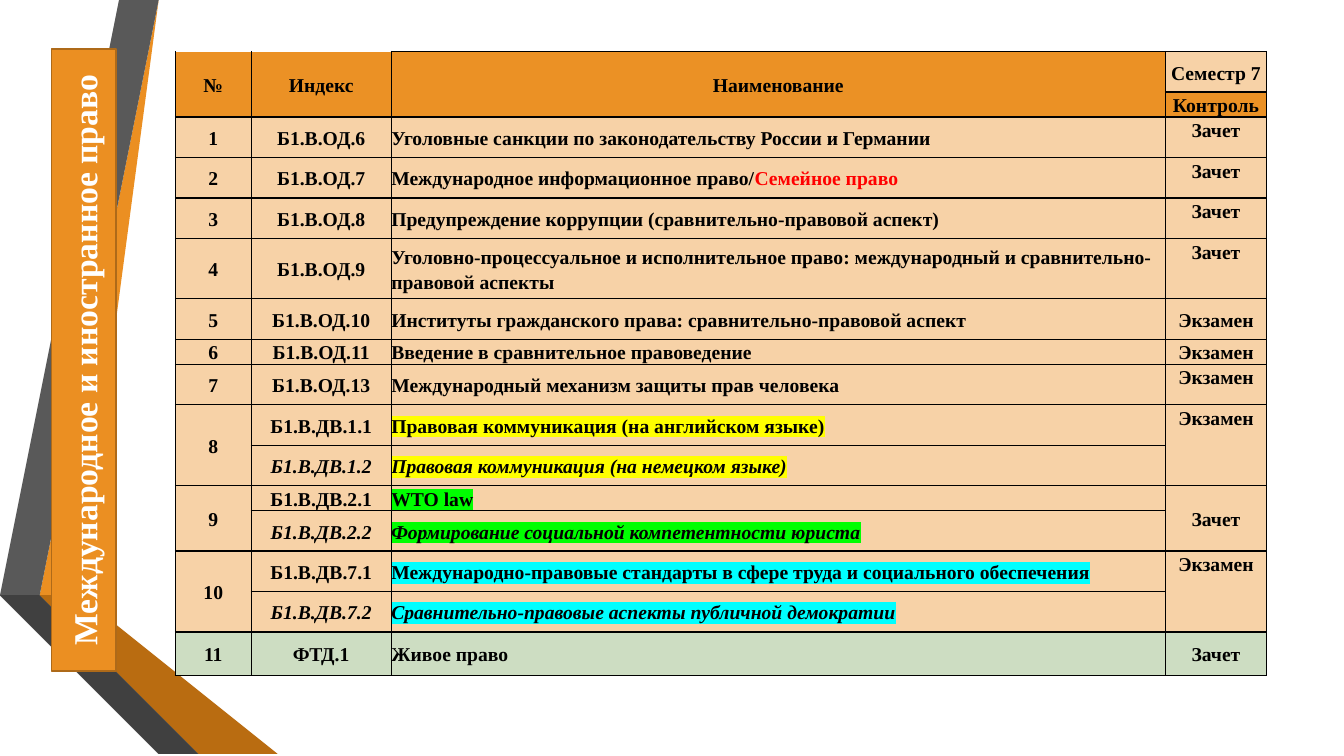
from pptx import Presentation
from pptx.dml.color import RGBColor
from pptx.enum.shapes import MSO_SHAPE
from pptx.enum.text import MSO_ANCHOR, PP_ALIGN
from pptx.oxml import parse_xml
from pptx.oxml.ns import nsdecls
from pptx.util import Cm, Pt

COLORS = {
    "orange": "EB8F22", "gray": "595959", "black": "000000", "white": "FFFFFF",
    "dark": "262626", "brown": "7B480B", "rust": "B96C11", "charcoal": "404040",
    "edge": "AE6A19", "header": "EB9125", "peach": "F7D2A7", "green": "CDDDC2",
    "red": "FF0000", "yellow": "FFFF00", "lime": "00FF00", "cyan": "00FFFF",
}
TOP, MID = MSO_ANCHOR.TOP, MSO_ANCHOR.MIDDLE


def rgb(name):
    return RGBColor.from_string(COLORS[name])


def style(p, size, color, align=PP_ALIGN.CENTER):
    p.alignment = align
    p.font.name = "Times New Roman"
    p.font.size = Pt(size)
    p.font.bold = True
    p.font.color.rgb = rgb(color)


prs = Presentation()
prs.slide_width, prs.slide_height = Cm(33.87), Cm(19.05)
s = prs.slides.add_slide(prs.slide_layouts[6])

ribbons = [
    ("orange", [(1.27, 14.68), (1.96, 14.81), (4.39, 0), (3.68, 0)]),
    ("gray", [(3.53, 0), (2.82, 0), (0.41, 14.55), (1.12, 14.66)]),
    ("dark", [(0.41, 14.55), (3.68, 19.05), (3.84, 19.05)]),
    ("brown", [(1.27, 14.7), (5.28, 19.05), (5.44, 19.05)]),
    ("rust", [(1.27, 14.7), (5.44, 19.05), (7.19, 19.05), (1.96, 14.81), (1.27, 14.68)]),
    ("charcoal", [(5.13, 19.05), (1.22, 14.81), (1.09, 14.68), (1.12, 14.66),
                  (0.41, 14.55), (3.84, 19.05)]),
]
for color, points in ribbons:
    builder = s.shapes.build_freeform(*points[0], scale=Cm(1))
    builder.add_line_segments(points[1:], close=True)
    sp = builder.convert_to_shape()
    sp.shadow.inherit = False
    sp.fill.solid()
    sp.fill.fore_color.rgb = rgb(color)
    sp.line.fill.background()

rows = [
    ("№", "Индекс", "Наименование", "Семестр 7", MID, 1.02, None),
    ("", "", "", "Контроль", MID, 0.51, None),
    ("1", "Б1.В.ОД.6", "Уголовные санкции по законодательству России и Германии",
     "Зачет", TOP, 1.02, None),
    ("2", "Б1.В.ОД.7", "Международное информационное право/|Семейное право",
     "Зачет", TOP, 1.02, None),
    ("3", "Б1.В.ОД.8", "Предупреждение коррупции (сравнительно-правовой аспект)",
     "Зачет", TOP, 1.02, None),
    ("4", "Б1.В.ОД.9", "Уголовно-процессуальное и исполнительное право: "
     "международный и сравнительно-правовой аспекты", "Зачет", TOP, 1.52, None),
    ("5", "Б1.В.ОД.10", "Институты гражданского права: сравнительно-правовой аспект",
     "Экзамен", MID, 1.02, None),
    ("6", "Б1.В.ОД.11", "Введение в сравнительное правоведение",
     "Экзамен", TOP, 0.51, None),
    ("7", "Б1.В.ОД.13", "Международный механизм защиты прав человека",
     "Экзамен", TOP, 1.02, None),
    ("8", "Б1.В.ДВ.1.1", "Правовая коммуникация (на английском языке)",
     "Экзамен", TOP, 1.02, "yellow"),
    ("", "Б1.В.ДВ.1.2", "Правовая коммуникация (на немецком языке)",
     "", TOP, 1.02, "yellow"),
    ("9", "Б1.В.ДВ.2.1", "WTO law", "Зачет", MID, 0.51, "lime"),
    ("", "Б1.В.ДВ.2.2", "Формирование социальной компетентности юриста",
     "", MID, 1.02, "lime"),
    ("10", "Б1.В.ДВ.7.1",
     "Международно-правовые стандарты в сфере труда и социального обеспечения",
     "Экзамен", TOP, 1.02, "cyan"),
    ("", "Б1.В.ДВ.7.2", "Сравнительно-правовые аспекты публичной демократии",
     "", TOP, 1.02, "cyan"),
    ("11", "ФТД.1", "Живое право", "Зачет", MID, 1.09, None),
]
widths = [1.91, 3.53, 19.51, 2.55]
table = s.shapes.add_table(len(rows), len(widths), Cm(4.42), Cm(1.3),
                           Cm(sum(widths)), Cm(sum(row[5] for row in rows))).table
table.first_row = False
table.horz_banding = False
for column, width in zip(table.columns, widths):
    column.width = Cm(width)

for i, (*texts, anchor, height, mark) in enumerate(rows):
    table.rows[i].height = Cm(height)
    for j, text in enumerate(texts):
        cell = table.cell(i, j)
        cell.margin_left = cell.margin_right = cell.margin_top = cell.margin_bottom = 0
        cell.vertical_anchor = anchor if j == 3 else MID
        fill = "header" if i < 2 else "green" if i == len(rows) - 1 else "peach"
        if (i, j) == (0, 3):
            fill = "peach"
        tcPr = cell._tc.get_or_add_tcPr()
        for side in "LRTB":
            if side == "T" and i == 0 and j < 2:
                continue
            tcPr.append(parse_xml(
                f'<a:ln{side} {nsdecls("a")} w="12700"><a:solidFill>'
                f'<a:srgbClr val="{COLORS["black"]}"/></a:solidFill></a:ln{side}>'))
        cell.fill.solid()
        cell.fill.fore_color.rgb = rgb(fill)
        if not text:
            table.cell(i - 1, j).merge(cell)
            continue
        p = cell.text_frame.paragraphs[0]
        left = j == 2 and i > 1
        style(p, 14, "black", PP_ALIGN.LEFT if left else PP_ALIGN.CENTER)
        p.line_spacing = 1.15
        p.space_after = Pt(10)
        if mark and not texts[0] and j in (1, 2):
            p.font.italic = True
        for k, part in enumerate(text.split("|")):
            r = p.add_run()
            r.text = part
            if k:
                r.font.color.rgb = rgb("red")
            if mark and j == 2:
                r._r.get_or_add_rPr().append(parse_xml(
                    f'<a:highlight {nsdecls("a")}><a:srgbClr val="{COLORS[mark]}"/></a:highlight>'))

sp = s.shapes.add_shape(MSO_SHAPE.RECTANGLE, Cm(1.3), Cm(1.24), Cm(1.63), Cm(15.67))
sp.shadow.inherit = False
sp.fill.solid()
sp.fill.fore_color.rgb = rgb("orange")
sp.line.color.rgb = rgb("edge")
sp.line.width = Pt(1.25)
tf = sp.text_frame
tf.word_wrap = True
tf.vertical_anchor = MID
tf._txBody.bodyPr.set("vert", "vert270")
p = tf.paragraphs[0]
p.text = "Международное и иностранное право"
style(p, 24, "white")

prs.save("out.pptx")
